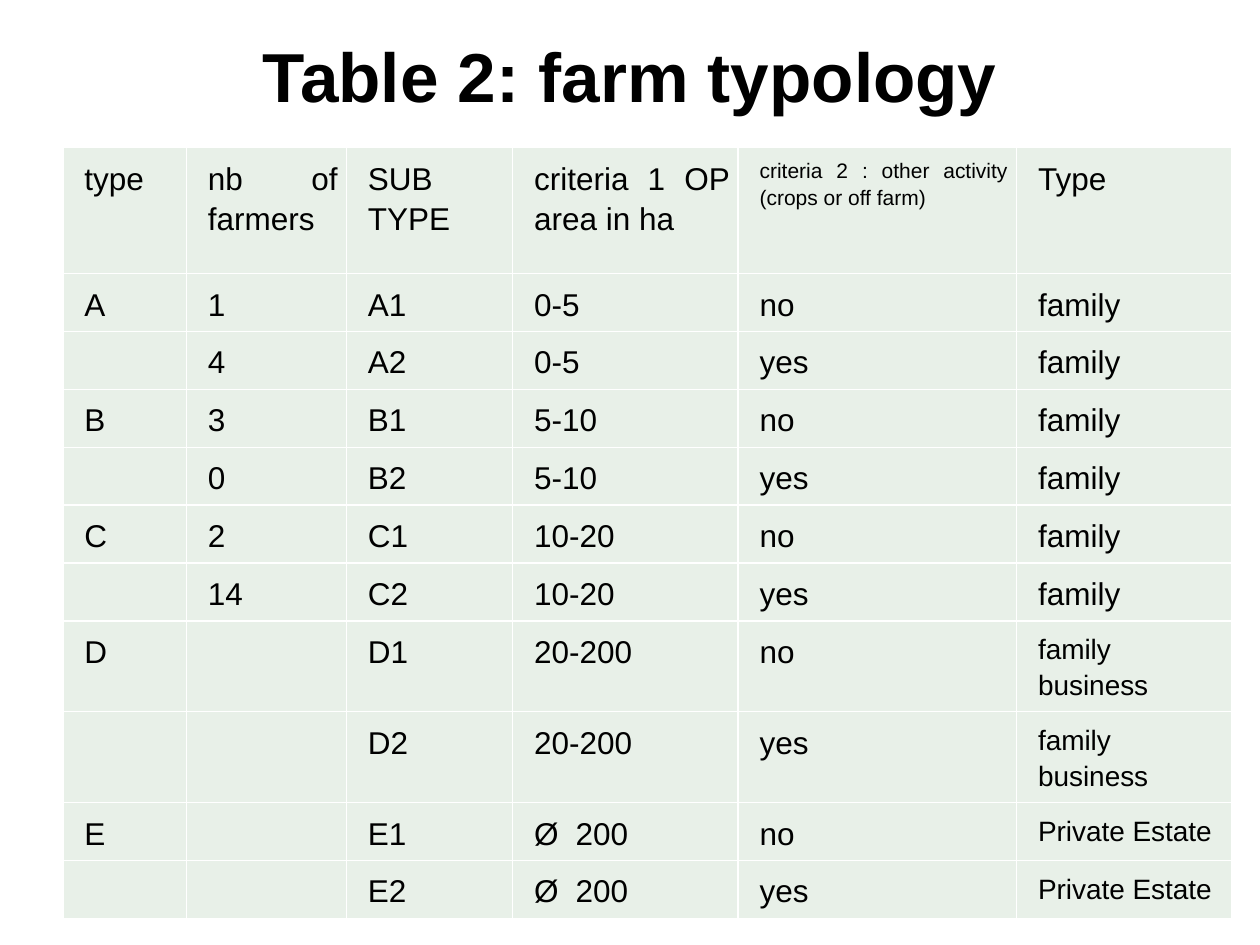
from dataclasses import dataclass

from lxml import etree
from pptx import Presentation
from pptx.dml.color import RGBColor
from pptx.enum.text import MSO_ANCHOR, PP_ALIGN
from pptx.oxml.ns import qn
from pptx.util import Inches, Pt

CENTER, JUSTIFY = PP_ALIGN.CENTER, PP_ALIGN.JUSTIFY
TOP = MSO_ANCHOR.TOP


@dataclass(frozen=True)
class Theme:
    """Colours, type sizes and spacing of the slide."""
    font: str = "Arial"
    ink: str = "000000"
    cell: str = "E8F0E8"
    border: str = "FFFFFF"
    title_size: float = 39.6
    body_size: float = 18
    estate_size: float = 16
    note_size: float = 12
    cell_inset: float = 0.07
    cell_bottom_inset: float = 0.03
    indent: float = 0.1
    symbol_hang: float = 0.33


THEME = Theme()

HEADINGS = ["type", "nb of farmers", "SUB TYPE", "criteria 1 OP area in ha",
            "criteria 2 : other activity (crops or off farm)", "Type"]
FARM_GROUPS = [
    ("A", ("1", "4"), "0-5", "family"),
    ("B", ("3", "0"), "5-10", "family"),
    ("C", ("2", "14"), "10-20", "family"),
    ("D", ("", ""), "20-200", "family business"),
    ("E", ("", ""), "Ø\t200", "Private Estate"),
]
COLUMN_WIDTHS = [0.98, 1.27, 1.32, 1.79, 2.21, 1.71]
HEADER_HEIGHT, ROW_HEIGHT, TALL_ROW_HEIGHT = 1, 0.46, 0.72
SIZES = {HEADINGS[4]: THEME.note_size,
         "family business": THEME.estate_size,
         "Private Estate": THEME.estate_size}


def write_text(frame, text, size=THEME.body_size, bold=False, align=JUSTIFY,
               line_spacing=None, indent=0, hang=0):
    """Write one formatted paragraph into a text frame."""
    paragraph = frame.paragraphs[0]
    properties = paragraph._p.get_or_add_pPr()
    properties.set("marL", str(Inches(indent + hang)))
    properties.set("indent", str(-Inches(hang)))
    paragraph.alignment = align
    paragraph.line_spacing = line_spacing
    run = paragraph.add_run()
    run.text = text
    run.font.name = THEME.font
    run.font.size = Pt(size)
    run.font.bold = bold
    run.font.color.rgb = RGBColor.from_string(THEME.ink)


def style_cell(cell):
    """Give a cell its insets, white borders and fill."""
    cell.margin_left = cell.margin_right = cell.margin_top = Inches(THEME.cell_inset)
    cell.margin_bottom = Inches(THEME.cell_bottom_inset)
    properties = cell._tc.get_or_add_tcPr()
    for side in ("lnL", "lnR", "lnT", "lnB"):
        line = etree.SubElement(properties, qn(f"a:{side}"), w=str(Pt(1)))
        fill = etree.SubElement(line, qn("a:solidFill"))
        etree.SubElement(fill, qn("a:srgbClr"), val=THEME.border)
    cell.fill.solid()
    cell.fill.fore_color.rgb = RGBColor.from_string(THEME.cell)


def typology_rows():
    """Return the headings and two rows, without and with other activity, per group."""
    rows = [HEADINGS]
    for group, counts, area, kind in FARM_GROUPS:
        for number, (count, activity) in enumerate(zip(counts, ("no", "yes")), 1):
            label = group if number == 1 else ""
            rows.append([label, count, f"{group}{number}", area, activity, kind])
    return rows


def add_title(slide, left, top, width, height):
    """Add the centred slide title."""
    frame = slide.shapes.add_textbox(left, top, width, height).text_frame
    frame.word_wrap = True
    frame.vertical_anchor = TOP
    frame.margin_top = 0
    write_text(frame, "Table 2: farm typology", size=THEME.title_size,
               bold=True, align=CENTER)


def add_typology_table(slide, left, top, width, height):
    """Add the farm table, with columns shared out over the given width."""
    rows = typology_rows()
    table = slide.shapes.add_table(len(rows), len(HEADINGS), left, top,
                                   width, height).table
    table.first_row = table.horz_banding = False
    for column, share in zip(table.columns, COLUMN_WIDTHS):
        column.width = int(width * share / sum(COLUMN_WIDTHS))
    for row, values in zip(table.rows, rows):
        tall = values[-1] == "family business"
        row.height = Inches(TALL_ROW_HEIGHT if tall else ROW_HEIGHT)
        for cell, value in zip(row.cells, values):
            style_cell(cell)
            if value:
                write_text(cell.text_frame, value,
                           size=SIZES.get(value, THEME.body_size),
                           line_spacing=1.15, indent=THEME.indent,
                           hang=THEME.symbol_hang if "\t" in value else 0)
    table.rows[0].height = Inches(HEADER_HEIGHT)


def main():
    """Build and save the slide."""
    deck = Presentation()
    deck.slide_width, deck.slide_height = Inches(10), Inches(7.5)
    slide = deck.slides.add_slide(deck.slide_layouts[6])
    add_title(slide, Inches(0.5), Inches(0.26), Inches(9), Inches(1.25))
    add_typology_table(slide, Inches(0.5), Inches(1.17), Inches(9.28), Inches(6.12))
    deck.save("out.pptx")


if __name__ == "__main__":
    main()
